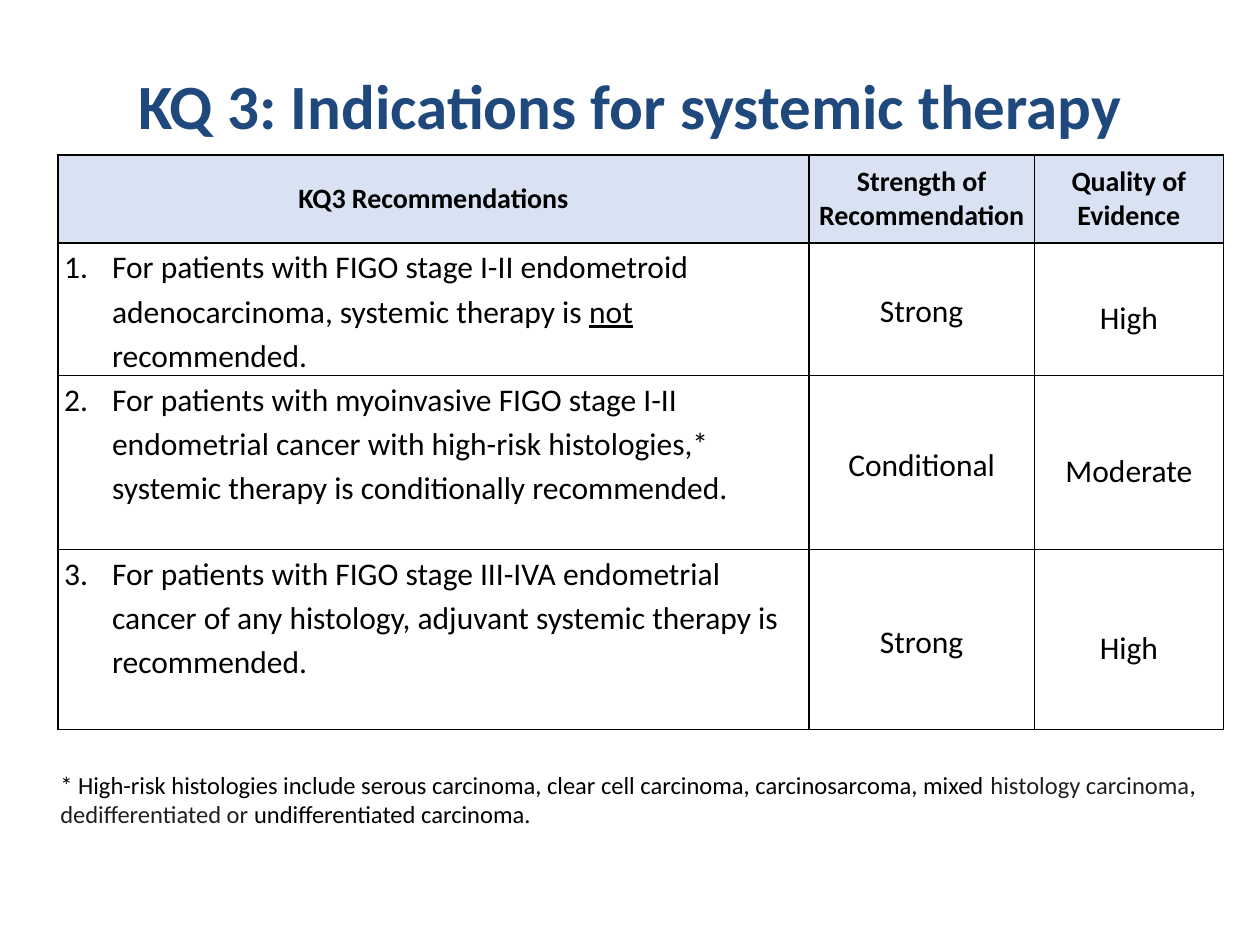
import pptx
import pptx.util
import pptx.dml.color
import pptx.enum.text
import pptx.oxml.ns
import lxml.etree
from dataclasses import dataclass

Inches = pptx.util.Inches
Pt = pptx.util.Pt
qn = pptx.oxml.ns.qn
Align = pptx.enum.text.PP_ALIGN
Anchor = pptx.enum.text.MSO_ANCHOR


@dataclass
class Theme:
    font: str = "Calibri"
    title: str = "1F497D"
    ink: str = "000000"
    soft_ink: str = "201F1E"
    header_fill: str = "D9E2F3"
    title_size: int = 36
    header_size: int = 16
    body_size: int = 18
    note_size: int = 14


theme = Theme()


def style(font, size, color, bold=False):
    font.name = theme.font
    font.size = Pt(size)
    font.bold = bold
    font.color.rgb = pptx.dml.color.RGBColor.from_string(color)


def add_borders(cell):
    properties = cell._tc.get_or_add_tcPr()
    for side in ("a:lnL", "a:lnR", "a:lnT", "a:lnB"):
        line = lxml.etree.SubElement(properties, qn(side), w=str(Pt(1)))
        fill = lxml.etree.SubElement(line, qn("a:solidFill"))
        lxml.etree.SubElement(fill, qn("a:srgbClr"), val=theme.ink)


deck = pptx.Presentation()
deck.slide_width = Inches(10)
deck.slide_height = Inches(7.5)
page = deck.slides.add_slide(deck.slide_layouts[6])

title_box = page.shapes.add_textbox(Inches(0.5), Inches(0.33), Inches(9), Inches(1))
title_box.text_frame.word_wrap = True
title_box.text_frame.vertical_anchor = Anchor.MIDDLE
title = title_box.text_frame.paragraphs[0]
title.text = "KQ 3: Indications for systemic therapy"
title.alignment = Align.CENTER
style(title.font, theme.title_size, theme.title, True)

headers = ["KQ3 Recommendations", "Strength of Recommendation", "Quality of Evidence"]
recommendations = [
    (["For patients with FIGO stage I-II endometroid adenocarcinoma, systemic therapy is ",
      "not", " recommended."], "Strong", "High"),
    (["For patients with myoinvasive FIGO stage I-II endometrial cancer with high-risk "
      "histologies,* systemic therapy is conditionally recommended."], "Conditional", "Moderate"),
    (["For patients with FIGO stage III-IVA endometrial cancer of any histology, "
      "adjuvant systemic therapy is recommended."], "Strong", "High"),
]
rows = [[[header] for header in headers]]
rows += [[advice, [strength], [quality]] for advice, strength, quality in recommendations]
column_widths = [5.96, 1.79, 1.5]
row_heights = [0.7, 1.05, 1.38, 1.43]
line_spacings = [1.15, 1.15, 1.5]

table = page.shapes.add_table(
    len(rows), len(headers), Inches(0.46), Inches(1.23),
    Inches(sum(column_widths)), Inches(sum(row_heights))).table
for column, width in zip(table.columns, column_widths):
    column.width = Inches(width)
for row, height in zip(table.rows, row_heights):
    row.height = Inches(height)

for row_index, row in enumerate(rows):
    for column_index, pieces in enumerate(row):
        is_header = row_index == 0
        is_advice = column_index == 0 and not is_header
        cell = table.cell(row_index, column_index)
        cell.margin_left = cell.margin_right = Inches(0.05)
        cell.margin_top = cell.margin_bottom = 0
        cell.vertical_anchor = Anchor.TOP if is_advice else Anchor.MIDDLE
        add_borders(cell)
        para = cell.text_frame.paragraphs[0]
        for piece in pieces:
            span = para.add_run()
            span.text = piece
            if piece == "not":
                span.font.underline = True
        if is_header:
            cell.fill.solid()
            cell.fill.fore_color.rgb = pptx.dml.color.RGBColor.from_string(theme.header_fill)
        else:
            cell.fill.background()
            para.line_spacing = line_spacings[column_index]
        if is_advice:
            properties = para._p.get_or_add_pPr()
            properties.set("marL", str(Inches(0.38)))
            properties.set("indent", str(Inches(-0.38)))
            lxml.etree.SubElement(properties, qn("a:buAutoNum"),
                                  type="arabicPeriod", startAt=str(row_index))
        else:
            para.alignment = Align.CENTER
        size = theme.header_size if is_header else theme.body_size
        style(para.font, size, theme.ink, is_header)

note_box = page.shapes.add_textbox(Inches(0.38), Inches(6.06), Inches(9.25), Inches(0.57))
note_box.text_frame.word_wrap = True
note_box.text_frame.auto_size = pptx.enum.text.MSO_AUTO_SIZE.SHAPE_TO_FIT_TEXT
note = note_box.text_frame.paragraphs[0]
for text, color in [
    ("* High-risk histologies include serous carcinoma, clear cell carcinoma, "
     "carcinosarcoma, mixed ", theme.ink),
    ("histology carcinoma", theme.soft_ink),
    (", ", theme.ink),
    ("dedifferentiated or ", theme.soft_ink),
    ("undifferentiated carcinoma.", theme.ink),
]:
    span = note.add_run()
    span.text = text
    style(span.font, theme.note_size, color)

deck.save("out.pptx")
